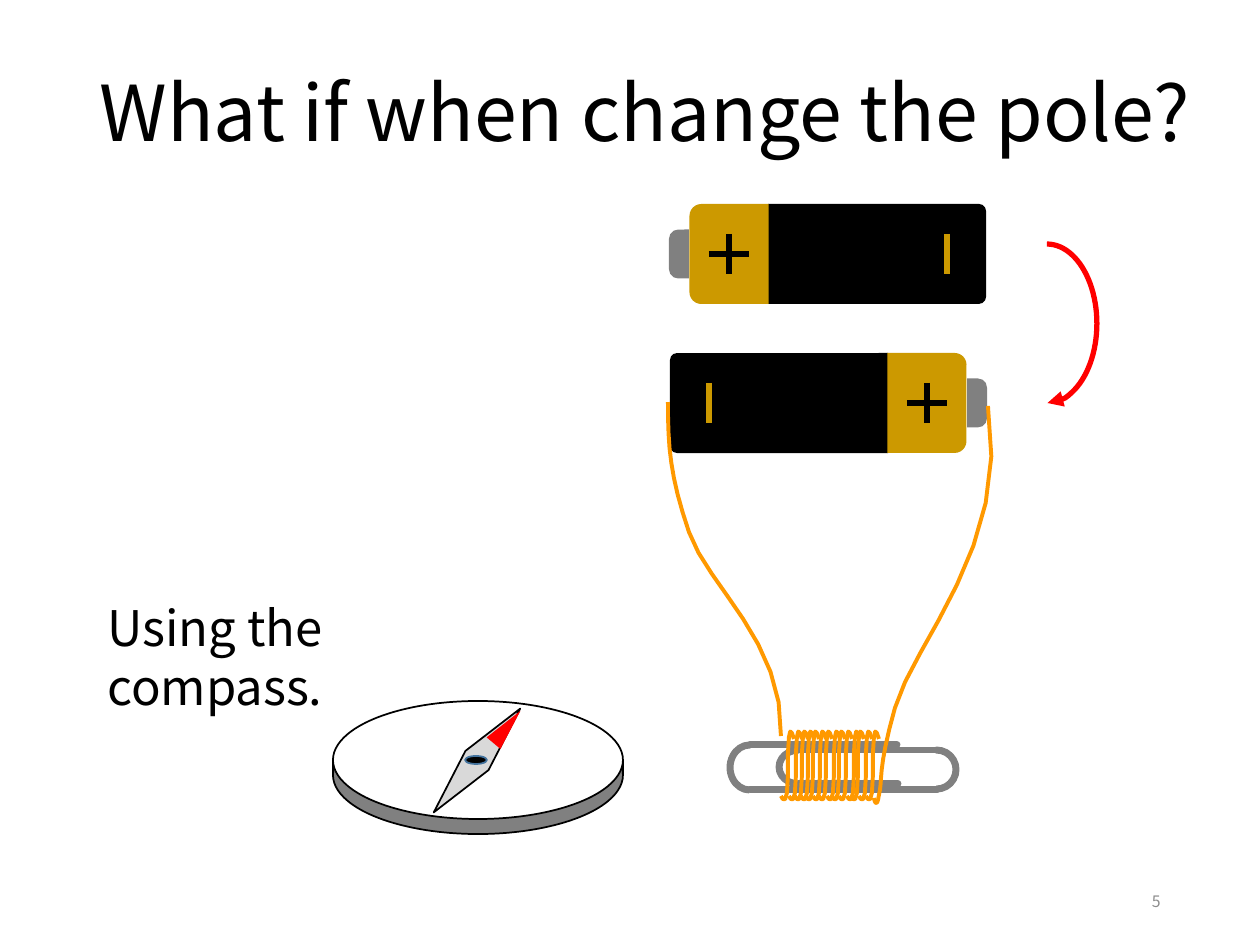
from dataclasses import dataclass

from lxml import etree
from pptx import Presentation
from pptx import util as u
from pptx.dml.color import RGBColor
from pptx.enum import shapes, text
from pptx.oxml.ns import qn

PX = u.Inches(1) / 126
SHAPE = shapes.MSO_SHAPE


@dataclass(frozen=True)
class Theme:
    font: str = "Noto Sans CJK KR"
    title_size: int = 44
    body_size: int = 28
    number_size: int = 9
    ink: str = "000000"
    paper: str = "FFFFFF"
    muted: str = "8C8C8C"
    metal: str = "808080"
    needle: str = "D9D9D9"
    pivot_edge: str = "43739E"
    red: str = "FF0000"
    gold: str = "CC9900"
    copper: str = "FF9900"


THEME = Theme()


def px(value):
    return u.Emu(round(value * PX))


def style_line(line, color, width, round_cap=False):
    line.color.rgb = RGBColor.from_string(color)
    line.width = u.Pt(width)
    if round_cap:
        line._get_or_add_ln().set("cap", "rnd")


def add_shape(parent, kind, box, fill=None, line=None, width=1, rotation=0, adjust=()):
    shape = parent.add_shape(kind, *map(px, box))
    shape.shadow.inherit = False
    shape.rotation = rotation
    for index, value in enumerate(adjust):
        shape.adjustments[index] = value
    if fill:
        shape.fill.solid()
        shape.fill.fore_color.rgb = RGBColor.from_string(fill)
    else:
        shape.fill.background()
    if line:
        style_line(shape.line, line, width)
    else:
        shape.line.fill.background()
    return shape


def add_line(parent, start, end, color, width, round_cap=False):
    connector = parent.add_connector(
        shapes.MSO_CONNECTOR.STRAIGHT, *map(px, (*start, *end)))
    style_line(connector.line, color, width, round_cap)
    etree.SubElement(connector._element.spPr, qn("a:effectLst"))


def bezier(points, steps):
    """Sample a chain of cubic curves that share their end points."""
    sampled = [points[0]]
    for first in range(0, len(points) - 1, 3):
        a, b, c, d = points[first:first + 4]
        for step in range(1, steps + 1):
            t = step / steps
            weights = ((1 - t) ** 3, 3 * t * (1 - t) ** 2, 3 * t * t * (1 - t), t ** 3)
            sampled.append(tuple(
                sum(w * p[axis] for w, p in zip(weights, (a, b, c, d)))
                for axis in (0, 1)))
    return sampled


def add_wire(parent, points, steps):
    start, *rest = [(px(x), px(y)) for x, y in bezier(points, steps)]
    builder = parent.build_freeform(*start, scale=1.0)
    builder.add_line_segments(rest, close=False)
    wire = builder.convert_to_shape()
    wire.shadow.inherit = False
    wire.fill.background()
    style_line(wire.line, THEME.copper, 2.25)


def format_text(shape, content, size, color, align, anchor):
    frame = shape.text_frame
    frame.text = content
    frame.word_wrap = True
    frame.auto_size = text.MSO_AUTO_SIZE.NONE
    frame.vertical_anchor = anchor
    paragraph = frame.paragraphs[0]
    paragraph.alignment = align
    font = paragraph.runs[0].font
    font.name, font.size = THEME.font, u.Pt(size)
    font.color.rgb = RGBColor.from_string(color)
    return frame


def add_title(slide, content):
    title = slide.shapes.title
    title.left, title.top, title.width, title.height = map(px, (87, 0, 1173, 233))
    frame = format_text(title, content, THEME.title_size, THEME.ink,
                        text.PP_ALIGN.LEFT, text.MSO_ANCHOR.MIDDLE)
    frame.paragraphs[0].line_spacing = 0.9


def add_battery(parent, center_x, center_y, direction):
    """Draw a battery whose plus pole points right (1) or left (-1)."""
    group = parent.add_group_shape().shapes

    def part(offset, across, along, corner, fill, facing):
        x = center_x + direction * offset
        add_shape(group, SHAPE.ROUND_2_SAME_RECTANGLE,
                  (x - across / 2, center_y - along / 2, across, along),
                  fill, rotation=90 * facing % 360, adjust=(corner, 0))

    part(149, 49, 20, 0.46, THEME.metal, direction)
    part(-49, 100, 218, 0.07, THEME.ink, -direction)
    part(99, 100, 79, 0.15, THEME.gold, direction)
    minus, plus = center_x - 119 * direction, center_x + 99 * direction
    for x, color in ((minus, THEME.gold), (plus, THEME.ink)):
        add_line(group, (x, center_y - 20), (x, center_y + 20), color, 3)
    add_line(group, (plus - 20, center_y), (plus + 20, center_y), THEME.ink, 3)


def add_compass(parent):
    for top, fill in ((716, THEME.metal), (701, THEME.paper)):
        add_shape(parent, SHAPE.OVAL, (333, top, 290, 118), fill, THEME.ink)
    needle = parent.add_group_shape().shapes
    add_shape(needle, SHAPE.DIAMOND, (462, 693, 30, 135), THEME.needle, THEME.ink,
              rotation=39.8)
    add_shape(needle, SHAPE.ISOSCELES_TRIANGLE, (498, 706, 18, 42), THEME.red,
              rotation=39.8)
    add_shape(parent, SHAPE.OVAL, (465, 756, 22, 8), THEME.ink, THEME.pivot_edge)
    for x in (333, 623):
        add_line(parent, (x, 775), (x, 760), THEME.ink, 1)


def add_paper_clip(parent):
    group = parent.add_group_shape().shapes
    for box, angles in (((779, 750, 39, 34), (162, 55.65)),
                        ((917, 750, 39, 39), (52.42, 163.18)),
                        ((730, 745, 39, 45), (162, 55.65))):
        add_shape(group, SHAPE.ARC, box, line=THEME.metal, width=4,
                  rotation=180, adjust=angles)
    for left, right, y in ((799, 937, 750), (750, 937, 790),
                           (799, 898, 784), (750, 897, 745)):
        add_line(group, (left, y), (right, y), THEME.metal, 4, round_cap=True)


def add_coil(parent):
    turn = ((0, 0), (1, 3), (5, 8), (6, -3), (8, -13),
            (6, -50), (8, -59), (9, -69), (11, -64), (13, -57))
    starts = (781, 789, 795, 801, 806, 813, 819, 827, 832, 839, 847, 851, 859, 866)
    for x in starts:
        add_wire(parent, [(x + dx, 796 + dy) for dx, dy in turn], steps=3)


def add_leads(parent):
    """Draw the wires from the coil to both poles."""
    left = ((668, 402), (668, 447), (670, 476), (689, 532),
            (708, 587), (784, 641), (781, 736))
    right = ((874, 798), (874, 800), (877, 810), (879, 795), (883, 780),
             (877, 772), (895, 708), (913, 643), (1011, 546), (988, 406))
    for points in (left, right):
        add_wire(parent, points, steps=8)


def add_swap_arrow(parent):
    arrow = add_shape(parent, SHAPE.ARC, (997, 244, 100, 159), line=THEME.red,
                      width=3, adjust=(162, 53.75))
    etree.SubElement(arrow.line._get_or_add_ln(), qn("a:tailEnd"), type="triangle")


def main():
    presentation = Presentation()
    presentation.slide_width, presentation.slide_height = px(1260), px(945)
    slide = presentation.slides.add_slide(presentation.slide_layouts[5])
    parent = slide.shapes

    add_title(slide, "What if when change the pole?")
    number = parent.add_textbox(*map(px, (890, 876, 283, 50)))
    format_text(number, "5", THEME.number_size, THEME.muted,
                text.PP_ALIGN.RIGHT, text.MSO_ANCHOR.MIDDLE)
    add_compass(parent)
    add_battery(parent, 828, 403, 1)
    add_paper_clip(parent)
    add_coil(parent)
    add_leads(parent)
    hint = parent.add_textbox(*map(px, (95, 591, 465, 72)))
    frame = format_text(hint, "Using the compass.", THEME.body_size, THEME.ink,
                        text.PP_ALIGN.LEFT, text.MSO_ANCHOR.TOP)
    frame.margin_right = px(60)
    add_battery(parent, 828, 254, -1)
    add_swap_arrow(parent)
    presentation.save("out.pptx")


if __name__ == "__main__":
    main()
